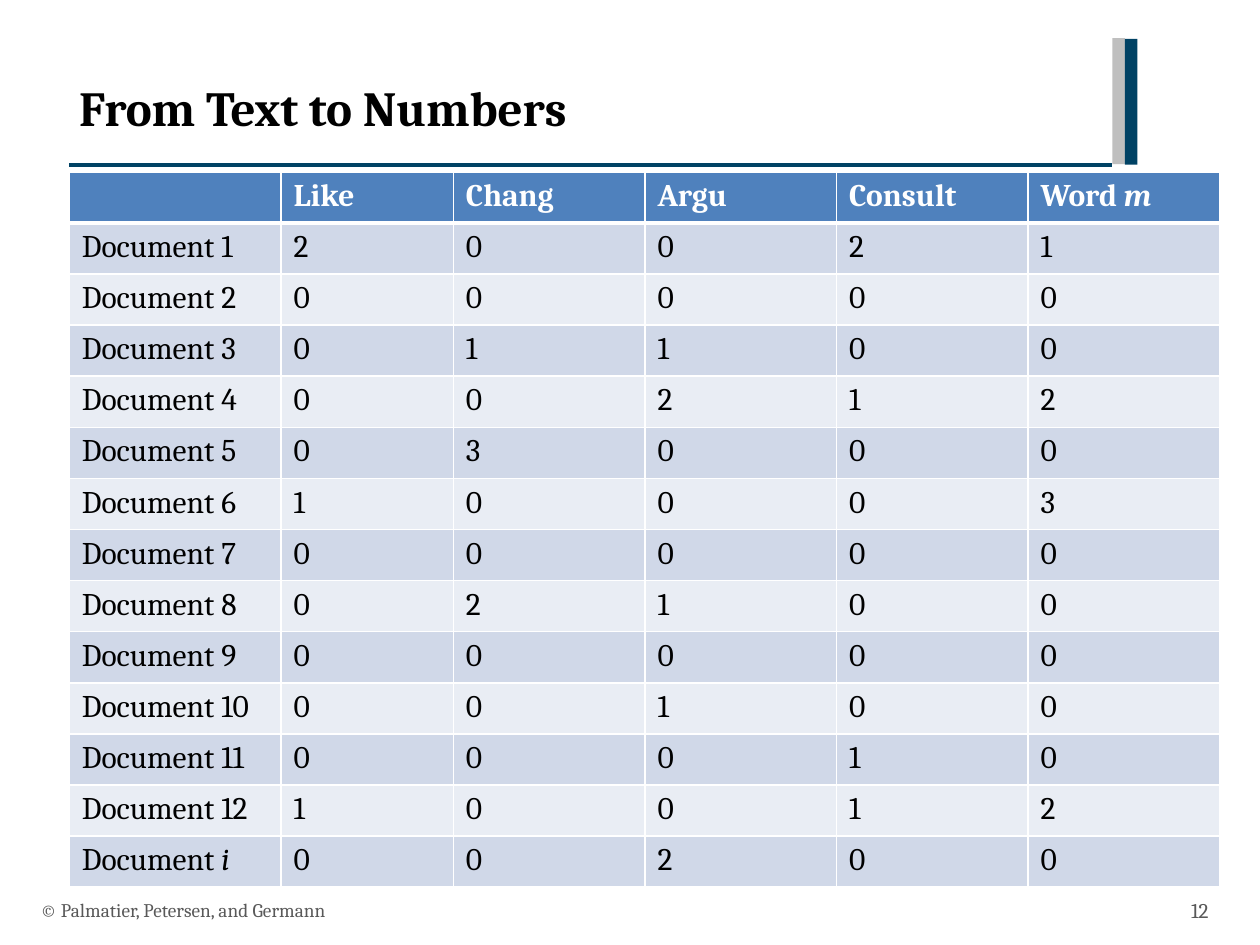
from lxml import etree
from pptx import Presentation
from pptx.dml.color import RGBColor
from pptx.enum import shapes, text
from pptx.oxml import ns
from pptx.util import Pt

FONT = "Cambria"
COLORS = {
    "navy": "004264", "silver": "BFBFBF", "gray": "595959", "black": "000000",
    "white": "FFFFFF", "header": "4F81BD", "odd": "D0D8E8", "even": "E9EDF4",
}
HEADINGS = ["", "Like", "Chang", "Argu", "Consult", "Word *m"]
DOCUMENTS = [*range(1, 13), "*i"]
COUNTS = ["20021", "00000", "01100", "00212", "03000", "10003", "00000",
          "02100", "00000", "00100", "00010", "10012", "00200"]
COL_WIDTHS = [121, 98.5] + [109.5] * 4
ROW_HEIGHT = 29.2


def rgb(name):
    return RGBColor.from_string(COLORS[name])


def style(p, size, color, bold=False):
    p.font.name = FONT
    p.font.size = Pt(size)
    p.font.bold = bold
    p.font.color.rgb = rgb(color)


def add_label(s, box, words, size, color, bold=False,
              anchor=text.MSO_ANCHOR.MIDDLE, align=text.PP_ALIGN.LEFT):
    tf = s.shapes.add_textbox(*map(Pt, box)).text_frame
    tf.word_wrap = True
    tf.vertical_anchor = anchor
    p = tf.paragraphs[0]
    p.text = words
    p.alignment = align
    style(p, size, color, bold)


def add_header(s, left, top, width, height):
    """Title over a rule, closed on the right by two upright bars."""
    bar = 7.2
    rule_y = top + height
    rule_end = left + width - 2 * bar
    rule = s.shapes.add_connector(shapes.MSO_CONNECTOR.STRAIGHT,
                                  Pt(left), Pt(rule_y), Pt(rule_end), Pt(rule_y))
    rule.line.color.rgb = rgb("navy")
    rule.line.width = Pt(2)
    etree.SubElement(rule._element.spPr, ns.qn("a:effectLst"))
    for i, color in enumerate(["silver", "navy"]):
        sp = s.shapes.add_shape(shapes.MSO_SHAPE.RECTANGLE,
                                Pt(rule_end + i * bar), Pt(top + i * 0.4),
                                Pt(bar), Pt(72))
        sp.shadow.inherit = False
        sp.fill.solid()
        sp.fill.fore_color.rgb = rgb(color)
        sp.line.fill.background()
    add_label(s, (left - 1.4, top + 19.2, 594.7, 63.4), "From Text to Numbers",
              28, "black", True, text.MSO_ANCHOR.TOP)


def set_borders(cell, **widths):
    tc_pr = cell._tc.get_or_add_tcPr()
    for side in "LRTB":
        ln = etree.SubElement(tc_pr, ns.qn(f"a:ln{side}"),
                              w=str(Pt(widths.get(side, 1))))
        fill = etree.SubElement(ln, ns.qn("a:solidFill"))
        etree.SubElement(fill, ns.qn("a:srgbClr"), val=COLORS["white"])


def fill_cell(cell, words, row):
    """Write one cell; the part of words after a star is italic."""
    set_borders(cell, **{0: {"B": 3}, 1: {"T": 3}}.get(row, {}))
    cell.fill.solid()
    cell.fill.fore_color.rgb = rgb("header" if row == 0 else
                                   "odd" if row % 2 else "even")
    p = cell.text_frame.paragraphs[0]
    plain, _, italic = words.partition("*")
    if plain:
        p.add_run().text = plain
    if italic:
        r = p.add_run()
        r.text = italic
        r.font.italic = True
    style(p, 18, "black" if row else "white", row == 0)


def add_count_table(s, left, top):
    rows = [HEADINGS] + [[f"Document {name}", *counts]
                         for name, counts in zip(DOCUMENTS, COUNTS)]
    table = s.shapes.add_table(len(rows), len(COL_WIDTHS), Pt(left), Pt(top),
                               Pt(sum(COL_WIDTHS)),
                               Pt(ROW_HEIGHT * len(rows))).table
    for column, width in zip(table.columns, COL_WIDTHS):
        column.width = Pt(width)
    for i, row in enumerate(rows):
        table.rows[i].height = Pt(ROW_HEIGHT)
        for j, words in enumerate(row):
            fill_cell(table.cell(i, j), words, i)


def add_footer(s, left, top, width, height):
    number_width = 44
    add_label(s, (left, top, 482, height),
              "© Palmatier, Petersen, and Germann", 11, "gray")
    add_label(s, (left + width - number_width, top, number_width, height),
              "12", 12, "gray", align=text.PP_ALIGN.RIGHT)


def main():
    prs = Presentation()
    prs.slide_width, prs.slide_height = Pt(720), Pt(540)
    s = prs.slides.add_slide(prs.slide_layouts[6])
    add_header(s, 39.6, 21.8, 610.4, 72.5)
    add_footer(s, 16, 505.5, 681.7, 28.8)
    add_count_table(s, 39.6, 98.2)
    prs.save("out.pptx")


if __name__ == "__main__":
    main()
